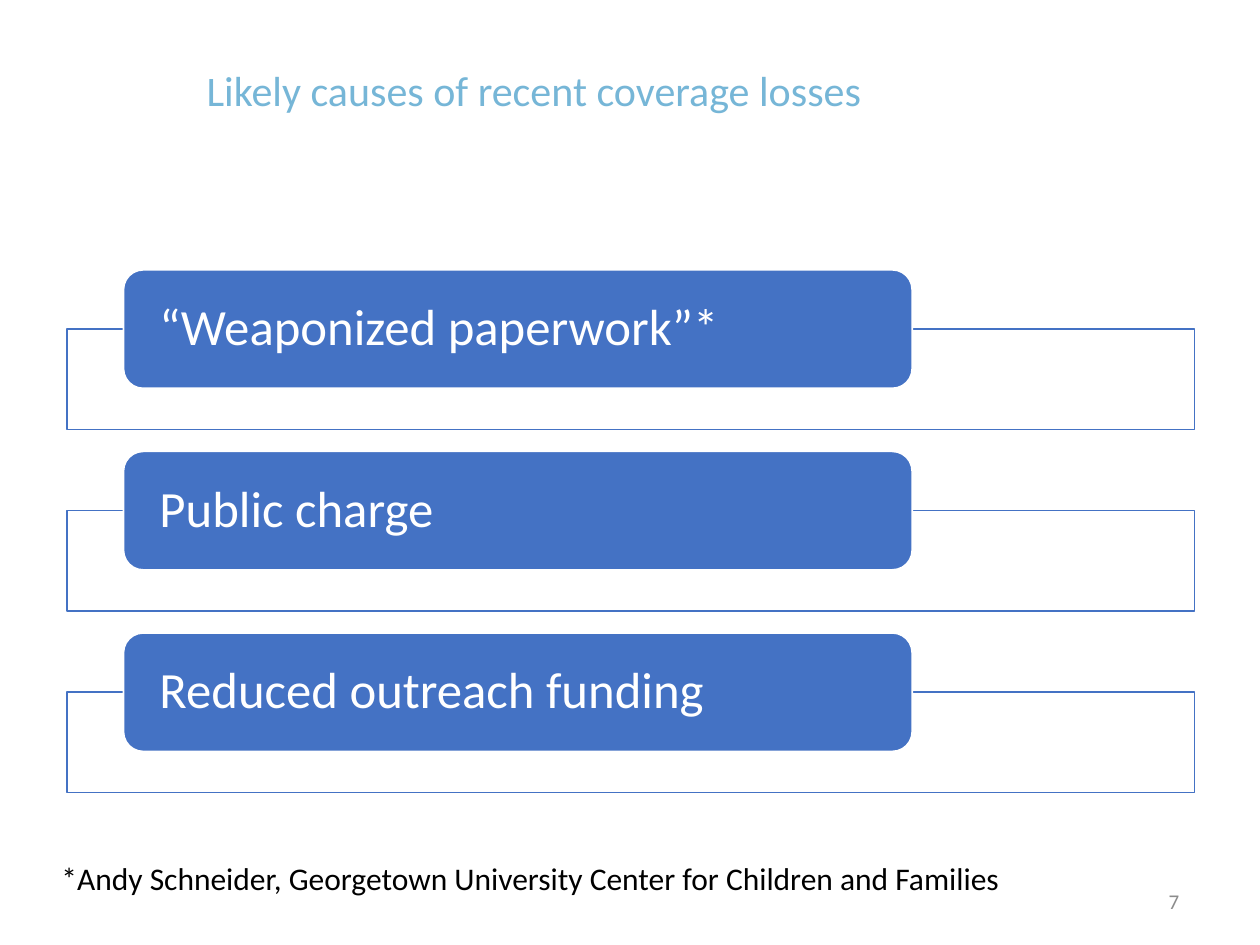
from lxml.etree import SubElement
from pptx import Presentation
from pptx.dml.color import RGBColor
from pptx.enum.shapes import MSO_SHAPE as Shape
from pptx.enum.text import MSO_ANCHOR as Anchor, PP_ALIGN as Align
from pptx.oxml.ns import qn
from pptx.util import Cm, Pt

BLUE, WHITE = "4472C4", "FFFFFF"


def color(value):
    return RGBColor.from_string(value)


def write(shape, text, size, font_color, align=Align.LEFT, anchor=Anchor.MIDDLE):
    """Put one formatted paragraph in the shape and return it."""
    frame = shape.text_frame
    frame.text = text
    frame.vertical_anchor = anchor
    paragraph = frame.paragraphs[0]
    paragraph.alignment = align
    paragraph.font.name = "Calibri"
    paragraph.font.size = Pt(size)
    paragraph.font.color.rgb = color(font_color)
    return paragraph


presentation = Presentation()
presentation.slide_width, presentation.slide_height = Cm(25.4), Cm(19.05)
slide = presentation.slides.add_slide(presentation.slide_layouts[5])
shapes = slide.shapes

title = shapes.title
title.left, title.top, title.width, title.height = Cm(3.91), Cm(0.66), Cm(20.17), Cm(2.44)
write(title, "Likely causes of recent coverage losses", 24, "76B6D7").line_spacing = 0.9

causes = ["“Weaponized paperwork”*", "Public charge", "Reduced outreach funding"]
for row, cause in enumerate(causes):
    top = 5.44 + 3.66 * row
    panel = shapes.add_shape(Shape.RECTANGLE, Cm(1.35), Cm(top + 1.19), Cm(22.73), Cm(2.03))
    label = shapes.add_shape(Shape.ROUNDED_RECTANGLE, Cm(2.49), Cm(top), Cm(15.9), Cm(2.39))
    for shape, fill, line in ((panel, WHITE, BLUE), (label, BLUE, WHITE)):
        shape.shadow.inherit = False
        shape.fill.solid()
        shape.fill.fore_color.rgb = color(fill)
        shape.line.color.rgb = color(line)
        shape.line.width = Pt(1)
    panel_color = panel.fill._xPr.find(qn("a:solidFill")).find(qn("a:srgbClr"))
    SubElement(panel_color, qn("a:alpha"), val="90000")

    frame = label.text_frame
    frame.word_wrap = True
    frame.margin_left = frame.margin_right = Cm(0.61)
    frame.margin_top = frame.margin_bottom = 0
    write(label, cause, 29, WHITE).line_spacing = 0.9

page_number = shapes.add_textbox(Cm(22.94), Cm(17.65), Cm(1.45), Cm(1.02))
page_number.text_frame.word_wrap = True
write(page_number, "7", 12, "8C8C8C", align=Align.CENTER)

footnote = shapes.add_textbox(Cm(0.99), Cm(17.2), Cm(19.66), Cm(1.02))
footnote.text_frame.word_wrap = False
write(footnote, "*Andy Schneider, Georgetown University Center for Children and Families",
      18, "000000", anchor=Anchor.TOP)

presentation.save("out.pptx")
